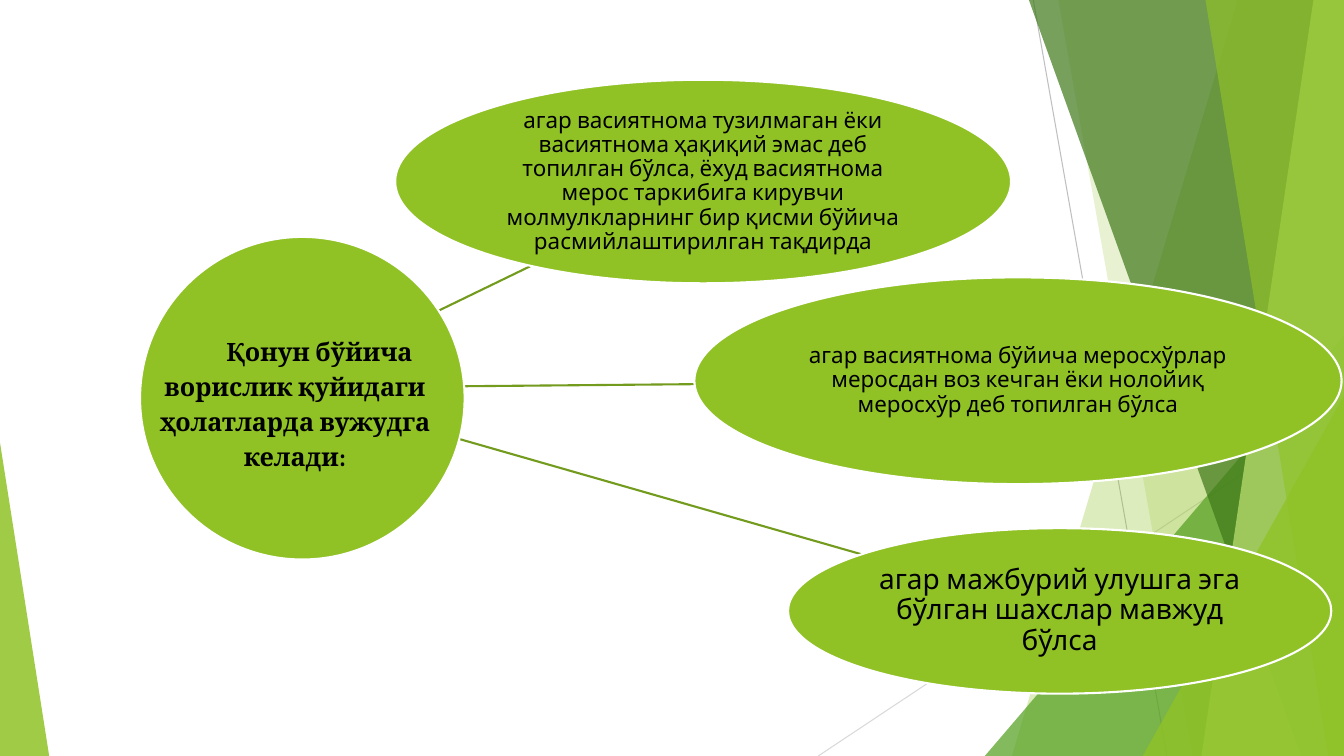
from dataclasses import dataclass

from lxml.etree import SubElement
from pptx import Presentation
from pptx.dml.color import RGBColor
from pptx.dml.fill import FillFormat
from pptx.enum.shapes import MSO_CONNECTOR, MSO_SHAPE
from pptx.enum.text import MSO_ANCHOR, MSO_AUTO_SIZE, PP_ALIGN
from pptx.oxml.ns import qn
from pptx.shapes.autoshape import Shape
from pptx.shapes.shapetree import SlideShapes
from pptx.text.text import TextFrame
from pptx.util import Cm, Pt

SLIDE_WIDTH, SLIDE_HEIGHT = 33.87, 19.05
COLORS = {
    "lime": "90C226",
    "green": "54A021",
    "forest": "3F7819",
    "pale": "C0E474",
    "spoke": "739B1E",
    "gray": "BFBFBF",
    "light gray": "D9D9D9",
    "white": "FFFFFF",
    "black": "000000",
}


@dataclass(frozen=True)
class Ray:
    start: tuple[float, float]
    end: tuple[float, float]
    color: str
    weight: float


@dataclass(frozen=True)
class Band:
    """Area from a slanted left edge to the right side of the slide."""
    top_x: float
    bottom_x: float
    color: str
    opacity: int


@dataclass(frozen=True)
class Corner:
    """Right triangle standing on the bottom of the slide."""
    left: float
    top: float
    width: float
    apex: int
    color: str
    opacity: int


@dataclass(frozen=True)
class Oval:
    left: float
    top: float
    width: float
    height: float
    wording: str = ""
    size: int = 16


BACKGROUND_RAYS = [
    Ray((26.04, 0), (29.41, SLIDE_HEIGHT), "gray", 0.75),
    Ray((SLIDE_WIDTH, 10.24), (20.62, SLIDE_HEIGHT), "light gray", 0.75),
]
FACETS = [
    Band(31.19, 25.5, "lime", 30),
    Band(26.67, 30.05, "lime", 20),
    Corner(24.82, 8.46, 9.05, 1, "green", 72),
    Band(25.93, 32.79, "forest", 70),
    Band(33.1, 30.28, "pale", 70),
    Band(30.38, 33.48, "lime", 65),
    Corner(28.8, 9.98, 5.07, 1, "lime", 80),
    Corner(0, 11.15, 1.24, 0, "lime", 85),
]
SPOKES = [
    Ray((9.75, 10.54), (21.72, 13.97), "spoke", 1.5),
    Ray((9.75, 9.75), (17.53, 9.68), "spoke", 1.5),
    Ray((9.75, 8.46), (13.36, 6.71), "spoke", 1.5),
]
OVALS = [
    Oval(3.53, 5.97, 8.18, 8.13),
    Oval(9.96, 2.01, 15.52, 5.13,
         "агар васиятнома тузилмаган ёки васиятнома ҳақиқий эмас деб топилган "
         "бўлса, ёхуд васиятнома мерос таркибига кирувчи молмулкларнинг бир "
         "қисми бўйича расмийлаштирилган тақдирда"),
    Oval(17.5, 6.99, 16.31, 5.21,
         "агар васиятнома бўйича меросхўрлар меросдан воз кечган ёки нолойиқ "
         "меросхўр деб топилган бўлса"),
    Oval(19.86, 13.31, 13.69, 4.17,
         "агар мажбурий улушга эга бўлган шахслар мавжуд бўлса", 20),
]
TOPIC = "Қонун бўйича ворислик қуйидаги ҳолатларда вужудга келади:"


def rgb(color: str) -> RGBColor:
    return RGBColor.from_string(COLORS[color])


def set_fill(fill: FillFormat, color: str) -> None:
    fill.solid()
    fill.fore_color.rgb = rgb(color)


def draw_ray(shapes: SlideShapes, ray: Ray) -> None:
    (x1, y1), (x2, y2) = ray.start, ray.end
    line = shapes.add_connector(MSO_CONNECTOR.STRAIGHT, Cm(x1), Cm(y1), Cm(x2), Cm(y2))
    line.line.color.rgb = rgb(ray.color)
    line.line.width = Pt(ray.weight)
    SubElement(line._element.spPr, qn("a:effectLst"))


def add_band(shapes: SlideShapes, band: Band) -> Shape:
    builder = shapes.build_freeform(Cm(band.top_x), 0)
    builder.add_line_segments([
        (Cm(SLIDE_WIDTH), 0),
        (Cm(SLIDE_WIDTH), Cm(SLIDE_HEIGHT)),
        (Cm(band.bottom_x), Cm(SLIDE_HEIGHT)),
    ])
    return builder.convert_to_shape()


def add_corner(shapes: SlideShapes, corner: Corner) -> Shape:
    triangle = shapes.add_shape(
        MSO_SHAPE.ISOSCELES_TRIANGLE, Cm(corner.left), Cm(corner.top),
        Cm(corner.width), Cm(SLIDE_HEIGHT - corner.top))
    triangle.adjustments[0] = corner.apex
    return triangle


def draw_facet(shapes: SlideShapes, facet: Band | Corner) -> None:
    if isinstance(facet, Band):
        shape = add_band(shapes, facet)
    else:
        shape = add_corner(shapes, facet)
    shape.shadow.inherit = False
    shape.line.fill.background()
    set_fill(shape.fill, facet.color)
    color_element = shape._element.spPr.find(qn("a:solidFill"))[0]
    SubElement(color_element, qn("a:alpha"), val=str(facet.opacity * 1000))


def write(frame: TextFrame, wording: str, font: str, size: int, spacing: float) -> None:
    frame.word_wrap = True
    frame.vertical_anchor = MSO_ANCHOR.MIDDLE
    paragraph = frame.paragraphs[0]
    paragraph.text = wording
    paragraph.alignment = PP_ALIGN.CENTER
    paragraph.line_spacing = spacing
    paragraph.font.name = font
    paragraph.font.size = Pt(size)
    paragraph.font.color.rgb = rgb("black")


def draw_oval(shapes: SlideShapes, oval: Oval) -> None:
    shape = shapes.add_shape(MSO_SHAPE.OVAL, Cm(oval.left), Cm(oval.top),
                             Cm(oval.width), Cm(oval.height))
    shape.shadow.inherit = False
    set_fill(shape.fill, "lime")
    shape.line.color.rgb = rgb("white")
    shape.line.width = Pt(1.5)
    if oval.wording:
        frame = shape.text_frame
        frame.margin_left = frame.margin_right = Cm(0.03)
        frame.margin_top = frame.margin_bottom = Cm(0.03)
        write(frame, oval.wording, "Cabin", oval.size, 0.9)


def draw_topic(shapes: SlideShapes) -> None:
    frame = shapes.add_textbox(Cm(3.28), Cm(8.26), Cm(8.31), Cm(3.73)).text_frame
    write(frame, TOPIC, "Cambria", 18, 1.15)
    frame.auto_size = MSO_AUTO_SIZE.SHAPE_TO_FIT_TEXT
    paragraph = frame.paragraphs[0]
    paragraph.font.bold = True
    paragraph.space_after = Pt(10)
    paragraph._p.get_or_add_pPr().set("indent", str(Cm(1.24)))


def main() -> None:
    presentation = Presentation()
    presentation.slide_width = Cm(SLIDE_WIDTH)
    presentation.slide_height = Cm(SLIDE_HEIGHT)
    shapes = presentation.slides.add_slide(presentation.slide_layouts[6]).shapes
    for ray in BACKGROUND_RAYS:
        draw_ray(shapes, ray)
    for facet in FACETS:
        draw_facet(shapes, facet)
    for spoke in SPOKES:
        draw_ray(shapes, spoke)
    for oval in OVALS:
        draw_oval(shapes, oval)
    draw_topic(shapes)
    presentation.save("out.pptx")


if __name__ == "__main__":
    main()
